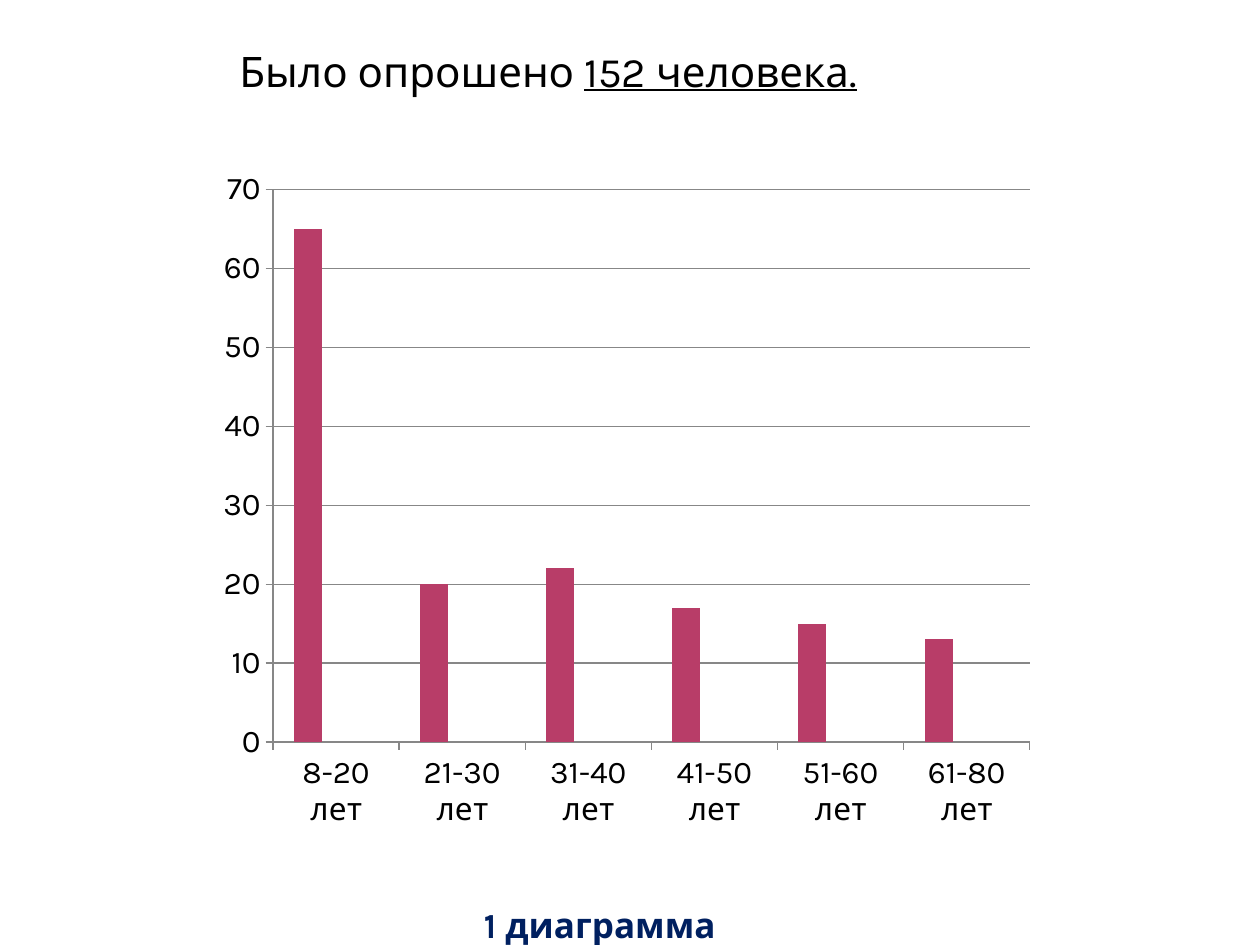
from pptx import Presentation
from pptx.chart.data import CategoryChartData
from pptx.dml.color import RGBColor
from pptx.enum.chart import XL_CHART_TYPE as ChartType, XL_TICK_MARK as Tick
from pptx.enum.text import MSO_ANCHOR as Anchor, PP_ALIGN as Align
from pptx.util import Pt

FONT = "Karla"
COLORS = {"text": "000000", "caption": "002060", "axis": "878787"}

TITLE = [("Было опрошено ", False), ("152 человека.", True)]  # text, underlined
CAPTION = "1 диаграмма"
AGES = ["8-20", "21-30", "31-40", "41-50", "51-60", "61-80"]
SERIES = [
    ("Series 1", [65, 20, 22, 17, 15, 13], "B83D68"),
    ("Series 2", [None] * len(AGES), "AC66BB"),
    ("Series 3", [None] * len(AGES), "DE6C36"),
]


def rgb(name):
    return RGBColor.from_string(COLORS[name])


def place(sp, left, top, width, height):
    sp.left, sp.top, sp.width, sp.height = map(Pt, (left, top, width, height))


def style(font, size, color, bold=False):
    font.name, font.size, font.bold = FONT, Pt(size), bold
    font.color.rgb = rgb(color)


def add_title(s):
    sp = s.shapes.title
    place(sp, 129.6, 22.3, 393.8, 36)
    tf = sp.text_frame
    tf.word_wrap, tf.vertical_anchor = True, Anchor.TOP
    p = tf.paragraphs[0]
    p.alignment = Align.LEFT
    for text, underlined in TITLE:
        r = p.add_run()
        r.text = text
        style(r.font, 24, "text")
        r.font.underline = underlined


def add_chart(s):
    data = CategoryChartData()
    data.categories = [f"{age} лет" for age in AGES]
    for name, values, _ in SERIES:
        data.add_series(name, values)
    chart = s.shapes.add_chart(ChartType.COLUMN_CLUSTERED, Pt(118), Pt(90),
                               Pt(480), Pt(391), data).chart
    chart.has_legend = chart.has_title = False
    style(chart.font, 18, "text")
    plot = chart.plots[0]
    plot.gap_width, plot.overlap, plot.vary_by_categories = 150, 0, False
    for series, (_, _, color) in zip(plot.series, SERIES):
        series.format.fill.solid()
        series.format.fill.fore_color.rgb = RGBColor.from_string(color)

    values = chart.value_axis
    values.minimum_scale, values.maximum_scale, values.major_unit = 0, 70, 10
    values.has_major_gridlines = True
    lines = [values.major_gridlines.format.line]
    for axis in (chart.category_axis, values):
        axis.major_tick_mark, axis.minor_tick_mark = Tick.OUTSIDE, Tick.NONE
        lines.append(axis.format.line)
    for line in lines:
        line.color.rgb = rgb("axis")
        line.width = Pt(0.75)


def add_caption(s):
    sp = s.shapes.add_textbox(0, 0, 0, 0)
    place(sp, -56.2, 517.7, 472.3, 22.3)
    tf = sp.text_frame
    tf.word_wrap, tf.vertical_anchor = True, Anchor.BOTTOM
    tf.margin_top = tf.margin_bottom = 0
    p = tf.paragraphs[0]
    p.alignment = Align.RIGHT
    r = p.add_run()
    r.text = CAPTION
    style(r.font, 20, "caption", bold=True)


def main():
    prs = Presentation()
    prs.slide_width, prs.slide_height = Pt(720), Pt(540)
    s = prs.slides.add_slide(prs.slide_layouts[5])
    add_title(s)
    add_chart(s)
    add_caption(s)
    prs.save("out.pptx")


if __name__ == "__main__":
    main()
